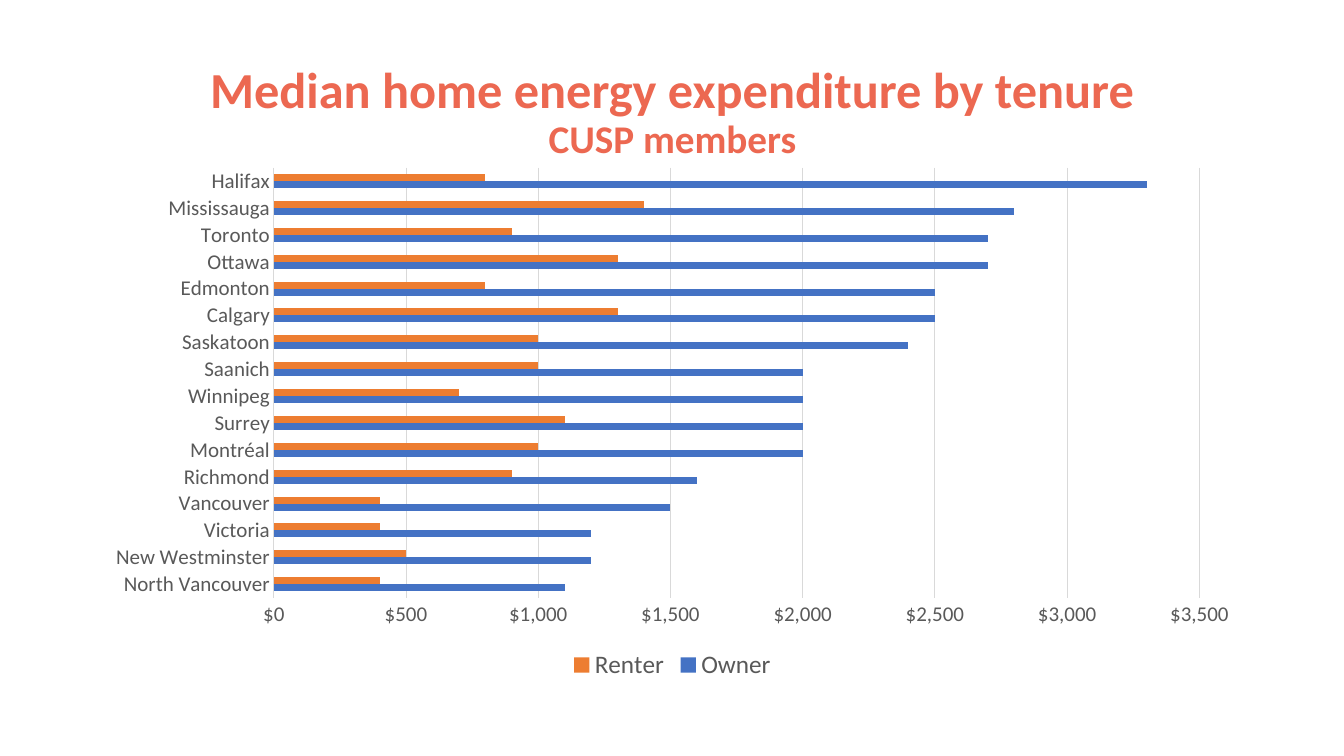
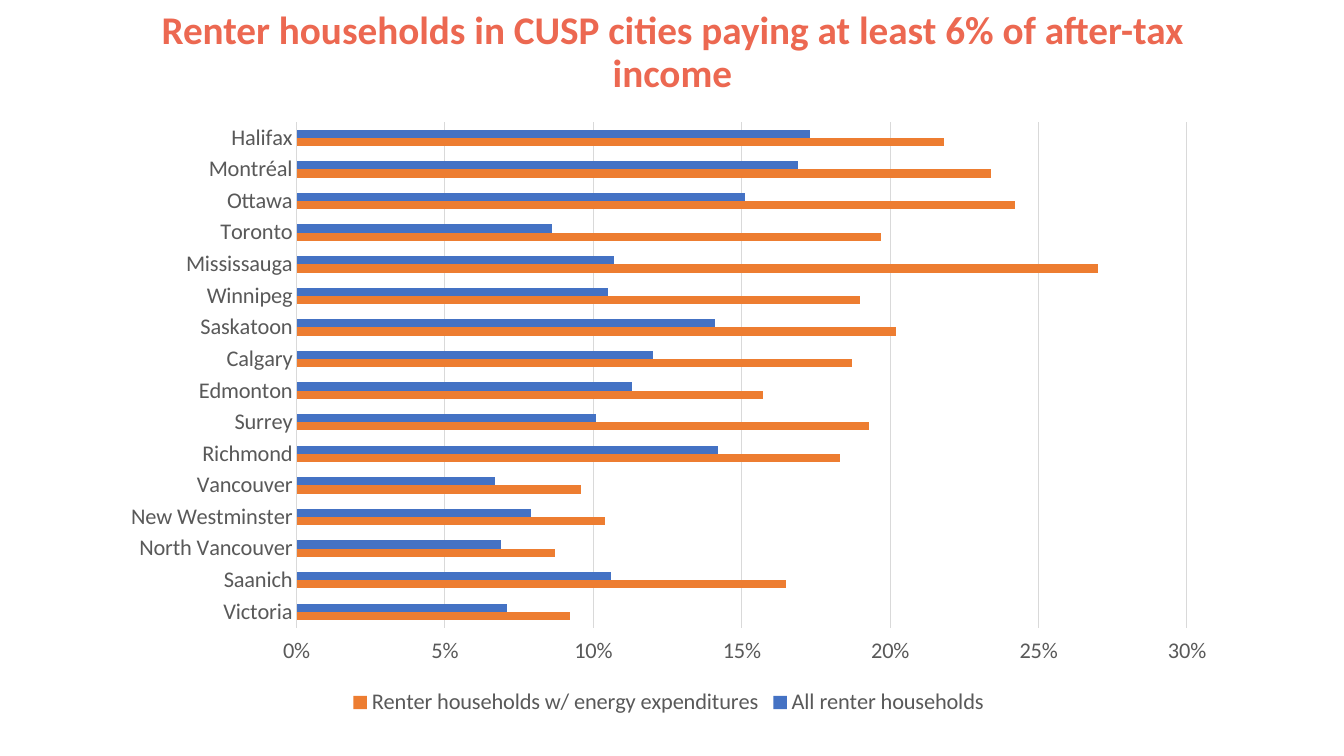
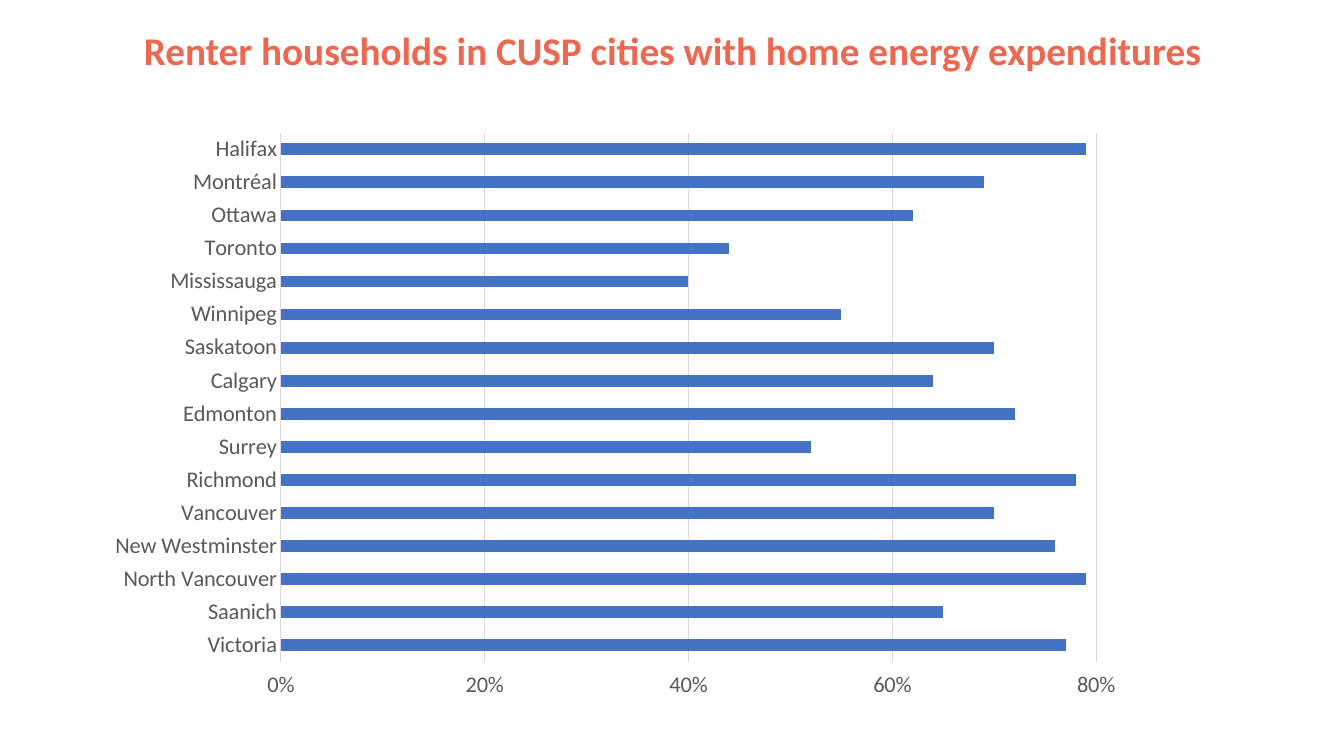
from pptx import Presentation
from pptx.chart.data import CategoryChartData
from pptx.dml.color import RGBColor
from pptx.enum.chart import (XL_CHART_TYPE, XL_LEGEND_POSITION, XL_TICK_LABEL_POSITION,
                             XL_TICK_MARK)
from pptx.enum.text import MSO_ANCHOR, MSO_AUTO_SIZE, PP_ALIGN
from pptx.oxml.ns import qn
from pptx.util import Cm, Pt

BAR = XL_CHART_TYPE.BAR_CLUSTERED
BOTTOM = XL_LEGEND_POSITION.BOTTOM
NO_TICK = XL_TICK_MARK.NONE
HIGH = XL_TICK_LABEL_POSITION.HIGH
MIDDLE, CENTER, NO_FIT = MSO_ANCHOR.MIDDLE, PP_ALIGN.CENTER, MSO_AUTO_SIZE.NONE

FONT = "Calibri"
CORAL, BLUE, ORANGE = "EC6851", "4472C4", "ED7D31"
BLACK, TEXT_GREY, LINE_GREY = "000000", "595959", "D9D9D9"


def rgb(value):
    return RGBColor.from_string(value)


def set_font(font, size, color):
    font.name = FONT
    font.size = Pt(size)
    font.color.rgb = rgb(color)


# Chart data
cities_by_cost = ["North Vancouver", "New Westminster", "Victoria", "Vancouver",
                  "Richmond", "Montréal", "Surrey", "Winnipeg", "Saanich", "Saskatoon",
                  "Calgary", "Edmonton", "Ottawa", "Toronto", "Mississauga", "Halifax"]
cities_east_to_west = ["Halifax", "Montréal", "Ottawa", "Toronto", "Mississauga",
                       "Winnipeg", "Saskatoon", "Calgary", "Edmonton", "Surrey",
                       "Richmond", "Vancouver", "New Westminster", "North Vancouver",
                       "Saanich", "Victoria"]
owner = [1100, 1200, 1200, 1500, 1600, 2000, 2000, 2000,
         2000, 2400, 2500, 2500, 2700, 2700, 2800, 3300]
renter = [400, 500, 400, 400, 900, 1000, 1100, 700,
          1000, 1000, 1300, 800, 1300, 900, 1400, 800]
all_renters = [0.173, 0.169, 0.151, 0.086, 0.107, 0.105, 0.141, 0.12,
               0.113, 0.101, 0.142, 0.067, 0.079, 0.069, 0.106, 0.071]
paying_renters = [0.218, 0.234, 0.242, 0.197, 0.27, 0.19, 0.202, 0.187,
                  0.157, 0.193, 0.183, 0.096, 0.104, 0.087, 0.165, 0.092]
share_with_costs = [0.79, 0.69, 0.62, 0.44, 0.4, 0.55, 0.7, 0.64,
                    0.72, 0.52, 0.78, 0.7, 0.76, 0.79, 0.65, 0.77]

# One entry per slide; boxes are left, top, width, height in cm
slides = [
    dict(title=[("Median home energy expenditure by tenure", 36), ("CUSP members", 28)],
         title_box=(2.34, 1.02, 29.21, 3.68), chart_box=(2.34, 3.96, 29.21, 13.31),
         cities=cities_by_cost, series=[("Owner", owner), ("Renter", renter)],
         size=15, legend_size=18, format='"$"#,##0', reverse=False,
         scale=(None, 3500, None)),
    dict(title=[("Renter households in CUSP cities paying at least 6% of after-tax income", 28)],
         title_box=(2.34, -0.08, 29.21, 2.84), chart_box=(2.74, 2.77, 28.22, 15.39),
         cities=cities_east_to_west,
         series=[("All renter households", all_renters),
                 ("Renter households w/ energy expenditures", paying_renters)],
         size=16, legend_size=16, format="0%", reverse=True,
         scale=(None, None, None)),
    dict(title=[("Renter households in CUSP cities with home energy expenditures", 28)],
         title_box=(2.34, -0.08, 29.21, 2.84), chart_box=(2.34, 3.05, 28.42, 14.86),
         cities=cities_east_to_west, series=[("Series 1", share_with_costs)],
         size=16, legend_size=None, format="0%", reverse=True,
         scale=(0, 0.9, 0.2)),
]

prs = Presentation()
prs.slide_width, prs.slide_height = Cm(33.87), Cm(19.05)

# Master title size, which also governs line breaks
title_style = prs.slide_master.element.find(".//" + qn("p:titleStyle"))
title_style.find(".//" + qn("a:defRPr")).set("sz", "2800")

for item in slides:
    s = prs.slides.add_slide(prs.slide_layouts[5])

    # Title
    sp = s.shapes.title
    sp.left, sp.top, sp.width, sp.height = [Cm(v) for v in item["title_box"]]
    tf = sp.text_frame
    tf.word_wrap = True
    tf.auto_size = NO_FIT
    tf.vertical_anchor = MIDDLE
    p = tf.paragraphs[0]
    p.text = "\v".join(line for line, size in item["title"])
    p.alignment = CENTER
    p.line_spacing = 0.9
    for r, (line, size) in zip(p.runs, item["title"]):
        set_font(r.font, size, CORAL)
        r.font.bold = True

    # Chart and bars
    data = CategoryChartData()
    data.categories = item["cities"]
    for name, values in item["series"]:
        data.add_series(name, values)
    box = [Cm(v) for v in item["chart_box"]]
    chart = s.shapes.add_chart(BAR, *box, data).chart
    chart.has_title = False
    set_font(chart.font, item["size"], BLACK)
    plot = chart.plots[0]
    plot.gap_width = 182
    plot.overlap = 0
    plot.vary_by_categories = False
    for series, color in zip(plot.series, (BLUE, ORANGE)):
        series.format.fill.solid()
        series.format.fill.fore_color.rgb = rgb(color)

    # Axes
    cat_axis, val_axis = chart.category_axis, chart.value_axis
    for axis in (cat_axis, val_axis):
        axis.major_tick_mark = axis.minor_tick_mark = NO_TICK
        set_font(axis.tick_labels.font, item["size"], TEXT_GREY)
    val_axis.has_major_gridlines = True
    for line in (cat_axis.format.line, val_axis.major_gridlines.format.line):
        line.color.rgb = rgb(LINE_GREY)
        line.width = Pt(0.75)
    val_axis.format.line.fill.background()
    val_axis.minimum_scale, val_axis.maximum_scale, val_axis.major_unit = item["scale"]
    val_axis.tick_labels.number_format = item["format"]
    val_axis.tick_labels.number_format_is_linked = False
    if item["reverse"]:
        # First city on top, value labels kept at the bottom
        cat_axis.reverse_order = True
        val_axis.tick_label_position = HIGH

    # Legend
    chart.has_legend = item["legend_size"] is not None
    if chart.has_legend:
        chart.legend.position = BOTTOM
        chart.legend.include_in_layout = False
        set_font(chart.legend.font, item["legend_size"], TEXT_GREY)

prs.save("out.pptx")
